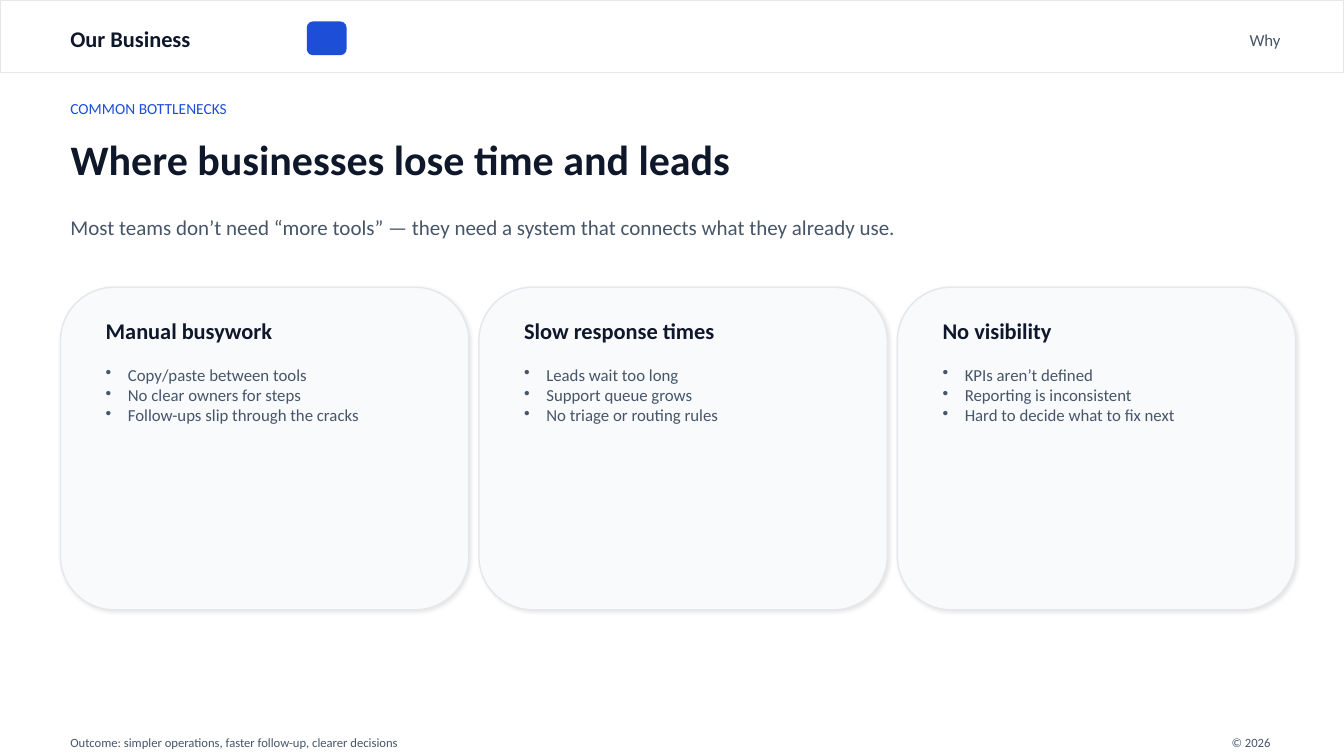
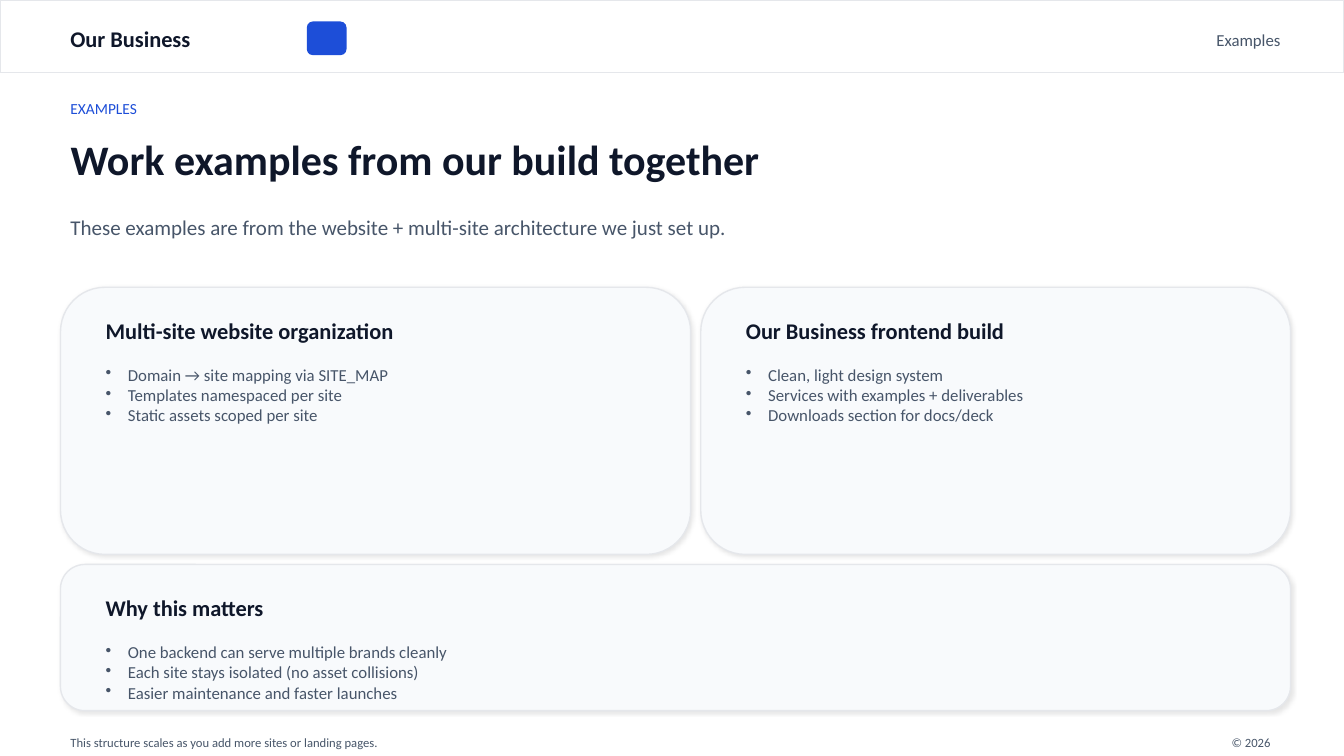
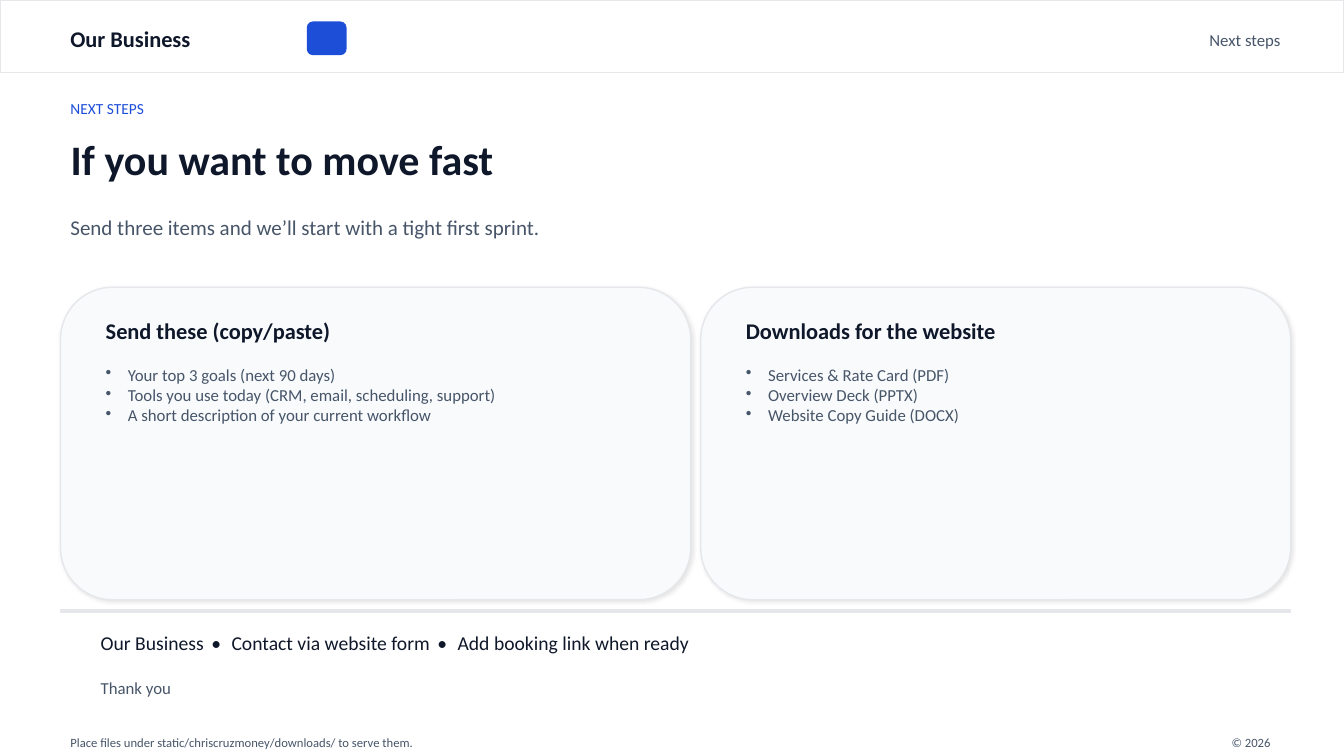
from lxml import etree
from pptx import Presentation
from pptx.dml.color import RGBColor
from pptx.enum import shapes, text
from pptx.oxml import ns
from pptx.util import Inches, Pt

INK = RGBColor(0x0F, 0x17, 0x2A)
SLATE = RGBColor(0x47, 0x55, 0x69)
BLUE = RGBColor(0x1D, 0x4E, 0xD8)
BORDER = RGBColor(0xE5, 0xE7, 0xEB)
CARD = RGBColor(0xF8, 0xFA, 0xFC)
WHITE = RGBColor(0xFF, 0xFF, 0xFF)

FONT = "Calibri"
RECT = shapes.MSO_SHAPE.RECTANGLE
ROUNDED = shapes.MSO_SHAPE.ROUNDED_RECTANGLE
RIGHT = text.PP_ALIGN.RIGHT
TOP, MIDDLE = text.MSO_ANCHOR.TOP, text.MSO_ANCHOR.MIDDLE

WIDTH, HEIGHT = 13.33, 7.5
MARGIN, CONTENT_WIDTH = 0.6, 12.2
CARDS_TOP, GAP, PADDING = 2.85, 0.1, 0.35

BUSINESS = "Our Business"
COPYRIGHT = "© 2026"

# Each row of cards: height, then (width, heading, points) for every card.
SLIDES = [
    {
        "section": "Why",
        "kicker": "COMMON BOTTLENECKS",
        "title": "Where businesses lose time and leads",
        "lead": "Most teams don’t need “more tools” — they need a system that "
                "connects what they already use.",
        "rows": [
            (3.2, [
                (4.05, "Manual busywork", [
                    "Copy/paste between tools",
                    "No clear owners for steps",
                    "Follow-ups slip through the cracks"]),
                (4.05, "Slow response times", [
                    "Leads wait too long",
                    "Support queue grows",
                    "No triage or routing rules"]),
                (3.95, "No visibility", [
                    "KPIs aren’t defined",
                    "Reporting is inconsistent",
                    "Hard to decide what to fix next"]),
            ]),
        ],
        "footer": "Outcome: simpler operations, faster follow-up, clearer decisions",
    },
    {
        "section": "Examples",
        "kicker": "EXAMPLES",
        "title": "Work examples from our build together",
        "lead": "These examples are from the website + multi-site architecture "
                "we just set up.",
        "rows": [
            (2.65, [
                (6.25, "Multi-site website organization", [
                    "Domain → site mapping via SITE_MAP",
                    "Templates namespaced per site",
                    "Static assets scoped per site"]),
                (5.85, f"{BUSINESS} frontend build", [
                    "Clean, light design system",
                    "Services with examples + deliverables",
                    "Downloads section for docs/deck"]),
            ]),
            (1.45, [
                (12.2, "Why this matters", [
                    "One backend can serve multiple brands cleanly",
                    "Each site stays isolated (no asset collisions)",
                    "Easier maintenance and faster launches"]),
            ]),
        ],
        "footer": "This structure scales as you add more sites or landing pages.",
    },
    {
        "section": "Next steps",
        "kicker": "NEXT STEPS",
        "title": "If you want to move fast",
        "lead": "Send three items and we’ll start with a tight first sprint.",
        "rows": [
            (3.1, [
                (6.25, "Send these (copy/paste)", [
                    "Your top 3 goals (next 90 days)",
                    "Tools you use today (CRM, email, scheduling, support)",
                    "A short description of your current workflow"]),
                (5.85, "Downloads for the website", [
                    "Services & Rate Card (PDF)",
                    "Overview Deck (PPTX)",
                    "Website Copy Guide (DOCX)"]),
            ]),
        ],
        "contact": [BUSINESS, "Contact via website form",
                    "Add booking link when ready"],
        "closing": "Thank you",
        "footer": "Place files under static/chriscruzmoney/downloads/ to serve them.",
    },
]


def place(shape, left, top, width, height):
    shape.left, shape.top = Inches(left), Inches(top)
    shape.width, shape.height = Inches(width), Inches(height)


def add_span(para, words, size, color, bold=False):
    span = para.add_run()
    span.text = words
    span.font.name, span.font.size, span.font.bold = FONT, Pt(size), bold
    span.font.color.rgb = color
    return span


def prepare_frame(box, anchor=MIDDLE):
    """Set wrapping and anchor, and return the box's first paragraph."""
    frame = box.text_frame
    frame.word_wrap = True
    frame.auto_size = text.MSO_AUTO_SIZE.NONE
    frame.vertical_anchor = anchor
    return frame.paragraphs[0]


def add_text(page, area, words, size, color, bold=False, align=None):
    box = page.shapes.add_textbox(*map(Inches, area))
    para = prepare_frame(box)
    para.alignment = align
    add_span(para, words, size, color, bold)


def add_panel(page, preset, area, fill, line):
    panel = page.shapes.add_shape(preset, *map(Inches, area))
    panel.shadow.inherit = False
    panel.fill.solid()
    panel.fill.fore_color.rgb = fill
    panel.line.color.rgb = line
    panel.line.width = Pt(1)
    return panel


def add_soft_shadow(shape):
    effects = shape.element.spPr.find(ns.qn("a:effectLst"))
    shadow = etree.SubElement(effects, ns.qn("a:outerShdw"), blurRad=str(Pt(3)),
                              dist=str(Pt(1.2)), dir="2700000", rotWithShape="0")
    color = etree.SubElement(shadow, ns.qn("a:srgbClr"), val="000000")
    etree.SubElement(color, ns.qn("a:alpha"), val="10000")


def add_bullets(page, area, points):
    box = page.shapes.add_textbox(*map(Inches, area))
    para = prepare_frame(box, TOP)
    for index, point in enumerate(points):
        if index:
            para = box.text_frame.add_paragraph()
        properties = para._p.get_or_add_pPr()
        properties.set("marL", str(Inches(0.22)))
        properties.set("indent", str(Inches(-0.22)))
        etree.SubElement(properties, ns.qn("a:buChar"), char="•")
        para.font.name, para.font.size = FONT, Pt(12)
        add_span(para, point, 12, SLATE)


def add_card(page, left, top, width, height, heading, points):
    add_soft_shadow(add_panel(page, ROUNDED, (left, top, width, height), CARD, BORDER))
    inner_left, inner_width = left + PADDING, width - 2 * PADDING
    add_text(page, (inner_left, top + 0.25, inner_width, 0.35), heading, 16, INK, True)
    add_bullets(page, (inner_left, top + 0.72, inner_width, height - 1.05), points)


def add_cards(page, rows):
    """Lay out the rows of cards and return where the next row would start."""
    top = CARDS_TOP
    for height, cards in rows:
        left = MARGIN
        for width, heading, points in cards:
            add_card(page, left, top, width, height, heading, points)
            left += width + GAP
        top += height + GAP
    return top


def add_frame(page, content):
    """Add what every slide shares: header, kicker, title, lead and footer."""
    add_panel(page, RECT, (0, 0, WIDTH, 0.72), WHITE, BORDER)
    add_text(page, (MARGIN, 0.18, 3, 0.4), BUSINESS, 16, INK, True)
    add_panel(page, ROUNDED, (3.05, 0.22, 0.38, 0.32), BLUE, BLUE)
    add_text(page, (9.2, 0.2, 3.6, 0.4), content["section"], 12, SLATE, align=RIGHT)

    add_text(page, (MARGIN, 0.95, CONTENT_WIDTH, 0.25), content["kicker"], 11, BLUE)
    title = page.shapes.title
    place(title, MARGIN, 1.25, CONTENT_WIDTH, 0.65)
    para = prepare_frame(title)
    para.alignment = text.PP_ALIGN.LEFT
    add_span(para, content["title"], 30, INK, True)
    add_text(page, (MARGIN, 1.95, 11.5, 0.6), content["lead"], 15, SLATE)

    add_text(page, (MARGIN, 7.28, 10, 0.18), content["footer"], 9, SLATE)
    add_text(page, (11.7, 7.28, 1, 0.18), COPYRIGHT, 9, SLATE, align=RIGHT)


def add_contact(page, top, items, closing):
    add_panel(page, RECT, (MARGIN, top, CONTENT_WIDTH, 0.03), BORDER, BORDER)
    box = page.shapes.add_textbox(*map(Inches, (0.9, top + 0.13, 11.6, 0.4)))
    para = prepare_frame(box)
    for index, item in enumerate(items):
        if index:
            divider = add_span(para, " • ", 14, INK)
            divider.font._element.set("spc", "210")
        add_span(para, item, 14, INK)
    add_text(page, (0.9, top + 0.57, 11.6, 0.4), closing, 12, SLATE)


def main():
    deck = Presentation()
    deck.slide_width, deck.slide_height = Inches(WIDTH), Inches(HEIGHT)
    title_only = deck.slide_layouts[5]
    for content in SLIDES:
        page = deck.slides.add_slide(title_only)
        add_frame(page, content)
        next_top = add_cards(page, content["rows"])
        if "contact" in content:
            add_contact(page, next_top, content["contact"], content["closing"])
    deck.save("out.pptx")


if __name__ == "__main__":
    main()
